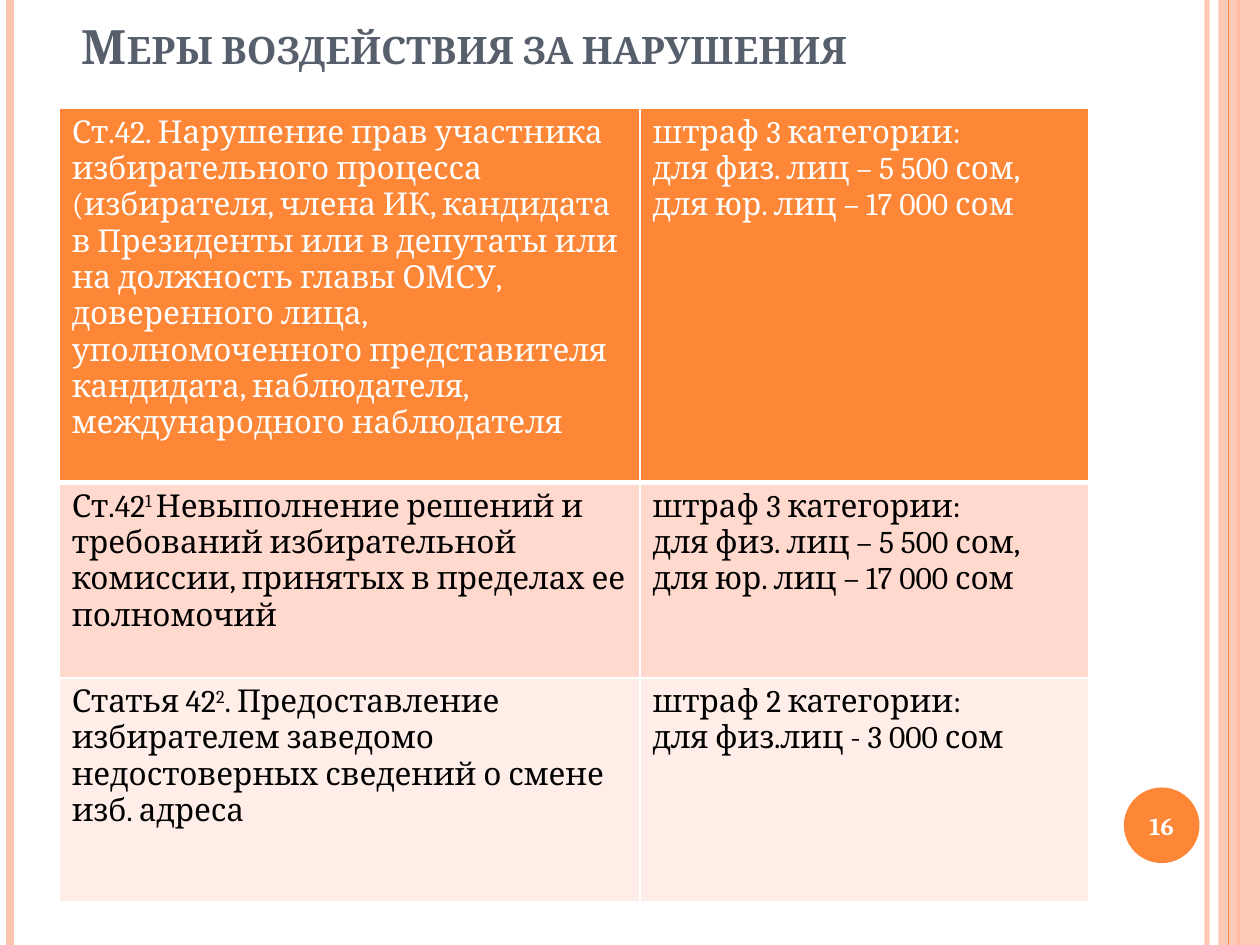
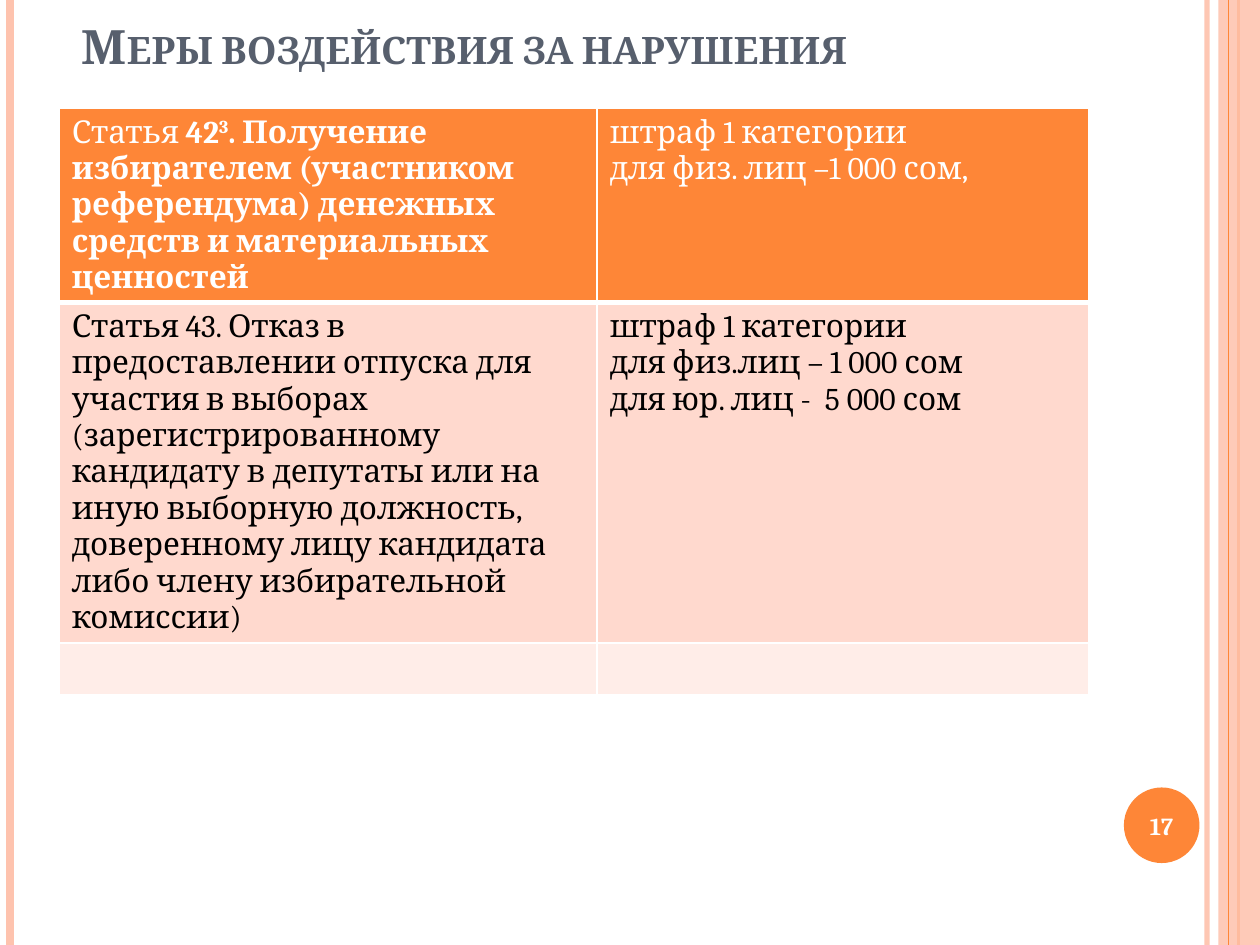
from dataclasses import dataclass

from lxml import etree
from pptx import Presentation
from pptx.dml.color import RGBColor
from pptx.enum import shapes, text
from pptx.oxml import ns
from pptx.util import Inches, Pt


@dataclass(frozen=True)
class Theme:
    font: str = "Cambria"
    orange: str = "FE8637"
    peach: str = "FEC3AE"
    slate: str = "575F6D"
    white: str = "FFFFFF"
    black: str = "000000"
    row_fills: tuple = ("FE8637", "FFD9CE", "FFEDE8")
    title_size: int = 27
    table_size: int = 18
    number_size: int = 14


@dataclass(frozen=True)
class Part:
    """A stretch of cell text with its own emphasis."""
    wording: str
    bold: bool = False
    raised: bool = False


THEME = Theme()
SLIDE_BOX = (0, 0, 10, 7.5)
TITLE_BOX = (0.55, 0.16, 8.17, 0.48)
NUMBER_BOX = (8.92, 6.25, 0.6, 0.6)
TABLE_LEFT, TABLE_TOP = 0.47, 0.86

TITLE = "Меры воздействия за нарушения"
CATEGORY_3_FINE = ["штраф 3 категории:", "для физ. лиц – 5 500 сом,", "для юр. лиц – 17 000 сом"]

# A cell is a list of paragraphs; a paragraph is a string or a list of parts.
SLIDES = [
    {
        "number": 16,
        "columns": (4.61, 3.56),
        "heights": (2.97, 1.55, 1.78),
        "rows": [
            (["Ст.42. Нарушение прав участника избирательного процесса (избирателя, "
              "члена ИК, кандидата в Президенты или в депутаты или на должность главы "
              "ОМСУ, доверенного лица, уполномоченного представителя кандидата, "
              "наблюдателя, международного наблюдателя"], CATEGORY_3_FINE),
            ([[Part("Ст.42"), Part("1 ", raised=True),
               Part("Невыполнение решений и требований избирательной комиссии, "
                    "принятых в пределах ее полномочий")]], CATEGORY_3_FINE),
            ([[Part("Статья 42"), Part("2", raised=True),
               Part(". Предоставление избирателем заведомо недостоверных сведений "
                    "о смене изб. адреса")]],
             ["штраф 2 категории:", "для физ.лиц - 3 000 сом"]),
        ],
    },
    {
        "number": 17,
        "columns": (4.27, 3.9),
        "heights": (1.53, 2.7, 0.41),
        "rows": [
            ([[Part("Статья "), Part("42", bold=True), Part("3", bold=True, raised=True),
               Part(". Получение избирателем (участником референдума) денежных средств "
                    "и материальных ценностей", bold=True)]],
             ["штраф 1 категории", "для физ. лиц –1 000 сом,"]),
            (["Статья 43. Отказ в предоставлении отпуска для участия в выборах "
              "(зарегистрированному кандидату в депутаты или на иную выборную должность, "
              "доверенному лицу кандидата либо члену избирательной комиссии)"],
             ["штраф 1 категории", "для физ.лиц – 1 000 сом", "для юр. лиц -  5 000 сом"]),
            ([], []),
        ],
    },
]


def paint(fill, color, opacity=100):
    fill.solid()
    fill.fore_color.rgb = RGBColor.from_string(color)
    if opacity < 100:
        color_element = fill._xPr.find(".//" + ns.qn("a:srgbClr"))
        etree.SubElement(color_element, ns.qn("a:alpha")).set("val", str(opacity * 1000))


def add_run(paragraph, wording, size, color, bold=False):
    run = paragraph.add_run()
    run.text = wording
    run.font.name = THEME.font
    run.font.size = Pt(size)
    run.font.bold = bold
    run.font.color.rgb = RGBColor.from_string(color)
    return run


def add_plain_shape(slide, kind, box, color, opacity=100):
    shape = slide.shapes.add_shape(kind, *map(Inches, box))
    shape.shadow.inherit = False
    shape.line.fill.background()
    paint(shape.fill, color, opacity)
    return shape


def add_stripe(slide, x, top, bottom, color, width, opacity=100):
    stripe = slide.shapes.add_connector(
        shapes.MSO_CONNECTOR.STRAIGHT, Inches(x), Inches(top), Inches(x), Inches(bottom))
    stripe.line.width = Pt(width)
    paint(stripe.line.fill, color, opacity)
    etree.SubElement(stripe._element.spPr, ns.qn("a:effectLst"))


def add_side_bands(slide, box):
    left, top, width, height = box
    right, bottom = left + width, top + height
    add_stripe(slide, right - 0.42, top, bottom, THEME.peach, 3, 93)
    add_stripe(slide, left + 0.08, top, bottom, THEME.peach, 4.5)
    add_stripe(slide, right - 0.17, top, bottom, THEME.orange, 1.5)
    add_plain_shape(slide, shapes.MSO_SHAPE.RECTANGLE,
                    (right - 0.33, top, 0.33, height), THEME.peach, 87)
    add_stripe(slide, right - 0.25, top, bottom, THEME.orange, 0.75)


def add_page_number(slide, box, number):
    badge = add_plain_shape(slide, shapes.MSO_SHAPE.OVAL, box, THEME.orange)
    frame = badge.text_frame
    frame.margin_left = frame.margin_right = 0
    frame.vertical_anchor = text.MSO_ANCHOR.MIDDLE
    paragraph = frame.paragraphs[0]
    paragraph.alignment = text.PP_ALIGN.CENTER
    add_run(paragraph, str(number), THEME.number_size, THEME.white, bold=True)


def set_title(slide, box, wording):
    title = slide.shapes.title
    title.left, title.top, title.width, title.height = map(Inches, box)
    frame = title.text_frame
    frame.auto_size = text.MSO_AUTO_SIZE.NONE
    frame.vertical_anchor = text.MSO_ANCHOR.BOTTOM
    paragraph = frame.paragraphs[0]
    paragraph.alignment = text.PP_ALIGN.LEFT
    run = add_run(paragraph, wording, THEME.title_size, THEME.slate, bold=True)
    run.font._element.set("cap", "small")


def set_borders(cell, row_index):
    widths = {"lnL": 1, "lnR": 1,
              "lnT": 3 if row_index == 1 else 1,
              "lnB": 3 if row_index == 0 else 1}
    properties = cell._tc.get_or_add_tcPr()
    for side, width in widths.items():
        border = etree.SubElement(properties, ns.qn("a:" + side), w=str(Pt(width)))
        fill = etree.SubElement(border, ns.qn("a:solidFill"))
        etree.SubElement(fill, ns.qn("a:srgbClr"), val=THEME.white)


def fill_cell(cell, paragraphs, color):
    for index, content in enumerate(paragraphs):
        frame = cell.text_frame
        paragraph = frame.add_paragraph() if index else frame.paragraphs[0]
        parts = [Part(content)] if isinstance(content, str) else content
        for part in parts:
            run = add_run(paragraph, part.wording, THEME.table_size, color, part.bold)
            if part.raised:
                run.font._element.set("baseline", "30000")


def add_penalty_table(slide, left, top, columns, heights, rows):
    box = (left, top, sum(columns), sum(heights))
    table = slide.shapes.add_table(len(rows), len(columns), *map(Inches, box)).table
    for column, width in zip(table.columns, columns):
        column.width = Inches(width)
    for row_index, (row, height) in enumerate(zip(table.rows, heights)):
        row.height = Inches(height)
        color = THEME.black if row_index else THEME.white
        for cell, paragraphs in zip(row.cells, rows[row_index]):
            set_borders(cell, row_index)
            paint(cell.fill, THEME.row_fills[row_index])
            fill_cell(cell, paragraphs, color)


def add_penalty_slide(presentation, content):
    slide = presentation.slides.add_slide(presentation.slide_layouts[5])
    paint(slide.background.fill, THEME.white)
    add_side_bands(slide, SLIDE_BOX)
    set_title(slide, TITLE_BOX, TITLE)
    add_penalty_table(slide, TABLE_LEFT, TABLE_TOP,
                      content["columns"], content["heights"], content["rows"])
    add_page_number(slide, NUMBER_BOX, content["number"])


def main():
    presentation = Presentation()
    presentation.slide_width, presentation.slide_height = map(Inches, SLIDE_BOX[2:])
    for content in SLIDES:
        add_penalty_slide(presentation, content)
    presentation.save("out.pptx")


if __name__ == "__main__":
    main()
